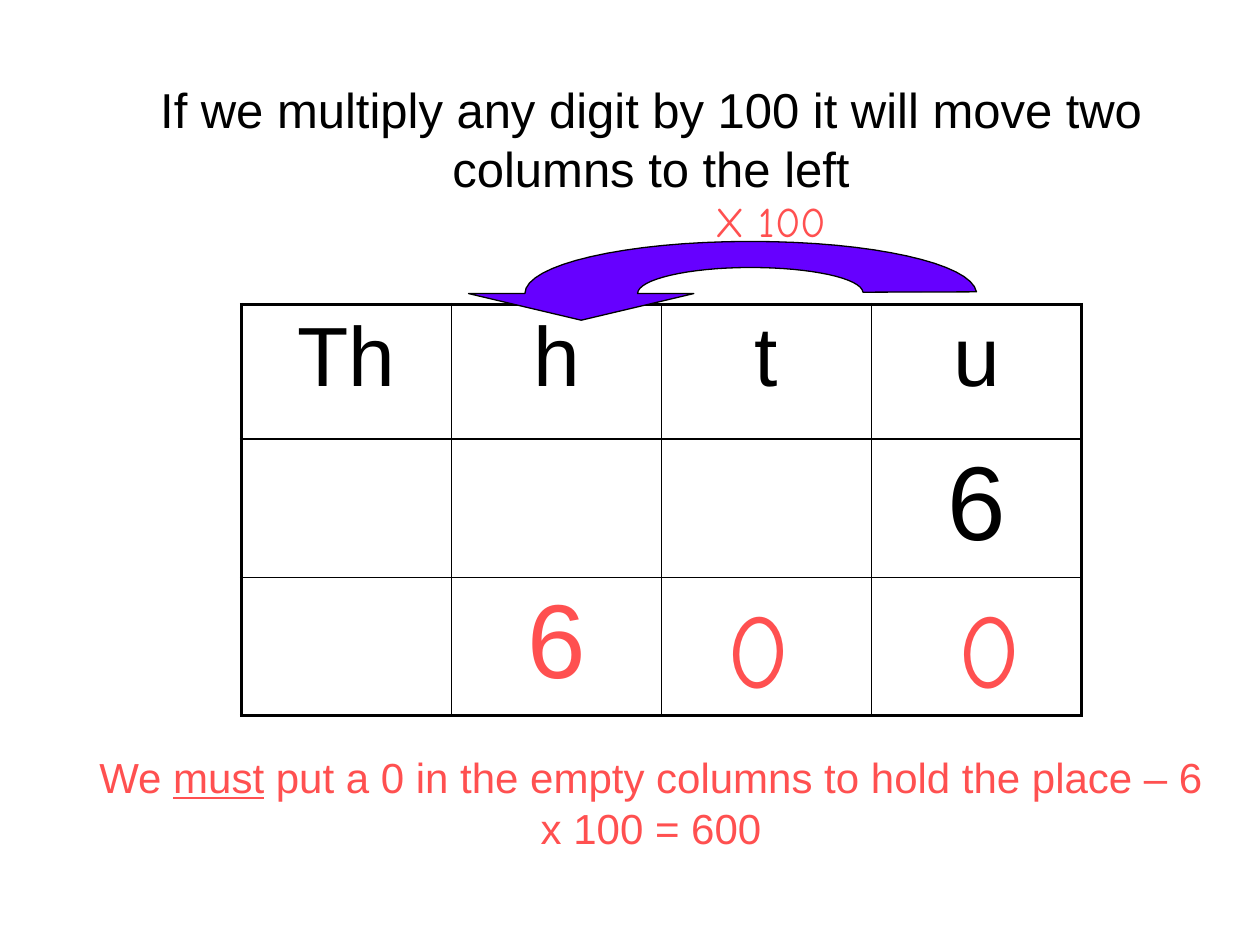
from lxml import etree
from pptx import Presentation
from pptx.dml.color import RGBColor
from pptx.enum.text import MSO_ANCHOR, MSO_AUTO_SIZE, PP_ALIGN
from pptx.oxml.ns import qn
from pptx.util import Pt

CENTER, LEFT = PP_ALIGN.CENTER, PP_ALIGN.LEFT
TOP, NO_FIT = MSO_ANCHOR.TOP, MSO_AUTO_SIZE.NONE
COLORS = {"black": "000000", "red": "FF5050", "violet": "6600FF"}
BODY_FONT, HAND_FONT = "Arial", "Comic Neue"


def write(p, pieces, size, color="black", font=BODY_FONT, align=CENTER, before=50):
    """Fill a paragraph with (text, underline) pieces; before is a percentage."""
    p.alignment = align
    spacing = etree.Element(qn("a:spcBef"))
    etree.SubElement(spacing, qn("a:spcPct"), val=str(before * 1000))
    p._p.get_or_add_pPr().insert(0, spacing)
    for text, underline in pieces:
        r = p.add_run()
        r.text = text
        style = {"size": Pt(size), "name": font, "underline": underline}
        for name, value in style.items():
            setattr(r.font, name, value)
        r.font.color.rgb = RGBColor.from_string(COLORS[color])


def border(cell, side, width):
    """Draw one black edge of a cell; side is L, R, T or B."""
    ln = etree.SubElement(cell._tc.get_or_add_tcPr(), qn(f"a:ln{side}"), w=str(Pt(width)))
    fill = etree.SubElement(ln, qn("a:solidFill"))
    etree.SubElement(fill, qn("a:srgbClr"), val=COLORS["black"])


prs = Presentation()
prs.slide_width, prs.slide_height = Pt(720), Pt(540)
slide = prs.slides.add_slide(prs.slide_layouts[5])
shapes = slide.shapes

# Title
title = shapes.title
place = {"left": 54, "top": 42, "width": 636, "height": 75}
for name, value in place.items():
    setattr(title, name, Pt(value))
tf = title.text_frame
frame = {"word_wrap": True, "auto_size": NO_FIT, "vertical_anchor": TOP}
for name, value in frame.items():
    setattr(tf, name, value)
write(tf.paragraphs[0],
      [("If we multiply any digit by 100 it will move two columns to the left", False)], 28)

# Place value table
ROW_HEIGHTS = [77, 79, 79]
COL_WIDTH, COLS = 120, 4
CELLS = {
    (0, 0): ("Th", 48, "black"),
    (0, 1): ("h", 48, "black"),
    (0, 2): ("t", 48, "black"),
    (0, 3): ("u", 48, "black"),
    (1, 3): ("6", 60, "black"),
    (2, 1): ("6", 60, "red"),
}
rows = len(ROW_HEIGHTS)
table = shapes.add_table(rows, COLS, Pt(138), Pt(174),
                         Pt(COL_WIDTH * COLS), Pt(sum(ROW_HEIGHTS))).table
table.first_row = table.horz_banding = False
for col in table.columns:
    col.width = Pt(COL_WIDTH)
for i, height in enumerate(ROW_HEIGHTS):
    table.rows[i].height = Pt(height)
    for j in range(COLS):
        cell = table.cell(i, j)
        outer = {"L": j == 0, "R": j == COLS - 1, "T": i == 0, "B": i == rows - 1}
        for side, is_outer in outer.items():
            border(cell, side, 2.25 if is_outer else 1)
        cell.fill.background()
        if (i, j) in CELLS:
            text, size, color = CELLS[i, j]
            write(cell.text_frame.paragraphs[0], [(text, False)], size, color, before=20)

# Curved arrow from units to hundreds: straight points and Bezier triples
STEPS = 16
START = (364.4, 167.8)
PATH = [
    [(364.4, 159.7), (393, 152.9), (429, 152.9)],
    [(463.5, 152.9), (492, 159), (493.2, 167)],
    [(558, 166.8)],
    [(555, 150.5), (498, 138), (429, 138)],
    [(357.6, 138), (300, 151.2), (300, 167.8)],
    [(267.8, 167.8)],
    [(332.2, 183)],
    [(396.5, 167.8)],
]
points = [START]
for part in PATH:
    if len(part) == 1:
        points += part
        continue
    controls = [points[-1], *part]
    for k in range(1, STEPS + 1):
        t = k / STEPS
        weights = [(1 - t) ** 3, 3 * t * (1 - t) ** 2, 3 * t * t * (1 - t), t ** 3]
        points.append(tuple(sum(w * c[axis] for w, c in zip(weights, controls))
                            for axis in (0, 1)))
outline = [(Pt(x), Pt(y)) for x, y in points]
builder = shapes.build_freeform(*outline[0])
builder.add_line_segments(outline[1:], close=True)
arrow = builder.convert_to_shape()
arrow.shadow.inherit = False
arrow.fill.solid()
arrow.fill.fore_color.rgb = RGBColor.from_string(COLORS["violet"])
arrow.line.color.rgb = RGBColor.from_string(COLORS["black"])
arrow.line.width = Pt(0.75)

# Red notes: box, pieces, size, font, alignment
RULE = [("We ", False), ("must", True),
        (" put a 0 in the empty columns to hold the place – 6 x 100 = 600", False)]
NOTES = [
    ((402, 108, 102, 36), [("X 100", False)], 24, HAND_FONT, LEFT),
    ((42, 426, 660, 65.5), RULE, 24, BODY_FONT, CENTER),
    ((408, 330, 72, 79), [("0", False)], 60, HAND_FONT, LEFT),
    ((540, 330, 72, 79), [("0", False)], 60, HAND_FONT, LEFT),
]
for box, pieces, size, font, align in NOTES:
    tf = shapes.add_textbox(*map(Pt, box)).text_frame
    tf.word_wrap = True
    write(tf.paragraphs[0], pieces, size, "red", font, align)

prs.save("out.pptx")
